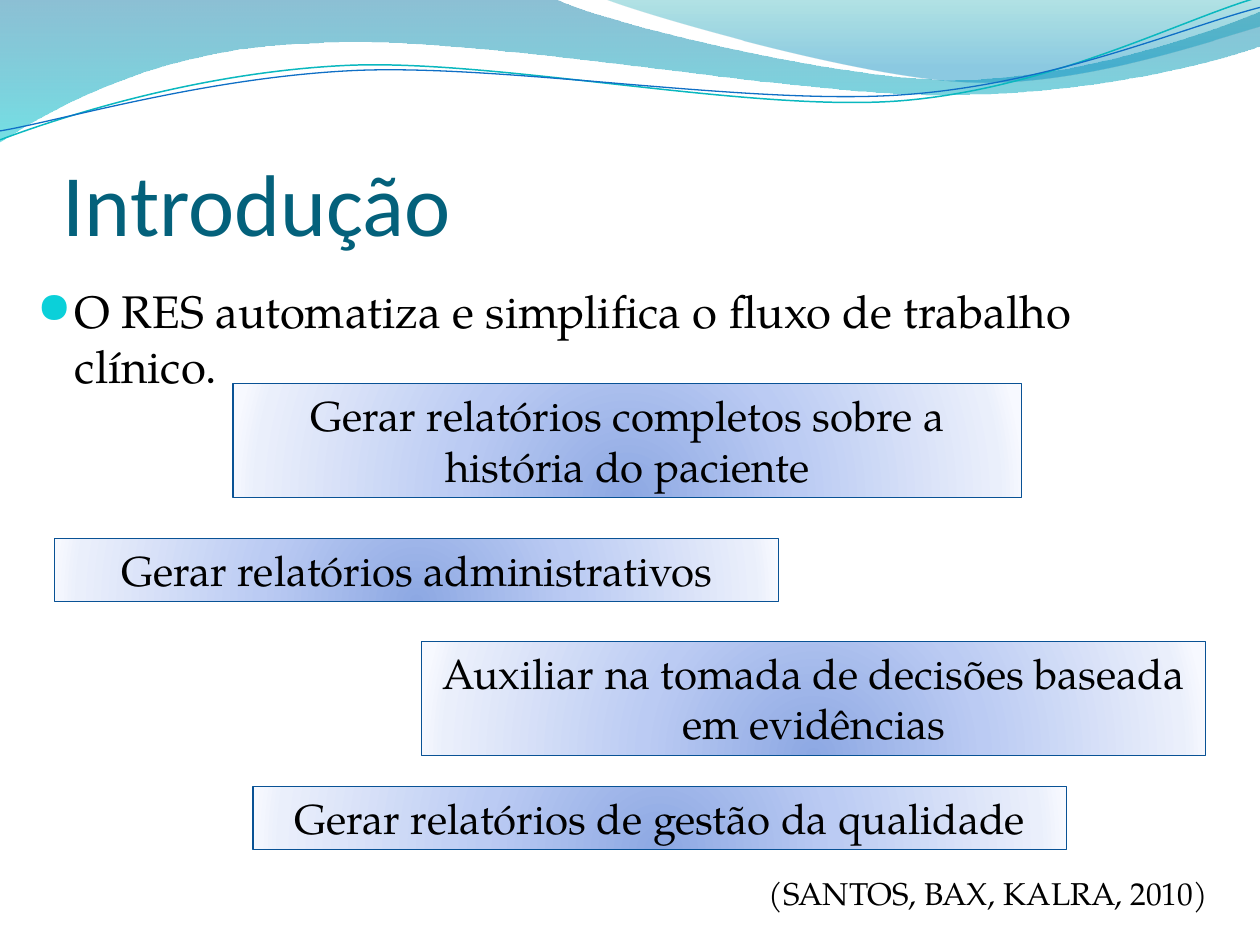
from lxml import etree
from pptx import Presentation
from pptx.dml.color import RGBColor
from pptx.enum.shapes import MSO_SHAPE
from pptx.enum.text import MSO_ANCHOR, MSO_AUTO_SIZE, PP_ALIGN
from pptx.oxml import parse_xml
from pptx.oxml.ns import nsdecls, qn
from pptx.util import Cm, Pt

BLACK = RGBColor(0x00, 0x00, 0x00)
TITLE_BLUE = RGBColor(0x04, 0x61, 0x7B)
BULLET_CYAN = RGBColor(0x0B, 0xD0, 0xD9)
WAVE_TEAL = RGBColor(0x0A, 0xB8, 0xBF)
WAVE_BLUE = RGBColor(0x0F, 0x6F, 0xC6)
BOX_EDGE = RGBColor(0x09, 0x52, 0x95)

# Gradient stops: position %, colour, opacity %
BAND_STOPS = [(0, RGBColor(0x00, 0x74, 0xA1), 45), (100, RGBColor(0x00, 0xC6, 0xCF), 55)]
CREST_STOPS = [(0, RGBColor(0x00, 0xA1, 0xA9), 30), (80, RGBColor(0x00, 0x8B, 0xBF), 45)]
BOX_STOPS = [
    (0, RGBColor(0x8D, 0xA8, 0xE3), 100),
    (43, RGBColor(0xBB, 0xCB, 0xF3), 100),
    (93, RGBColor(0xEA, 0xEF, 0xFB), 100),
    (100, RGBColor(0xF7, 0xF9, 0xFF), 100),
]
DOWNWARD = '<a:lin ang="5400000" scaled="0"/>'
RADIAL = '<a:path path="circle"><a:fillToRect l="50000" t="130000" r="50000" b="-30000"/></a:path>'

SERIF = "TeX Gyre Pagella"
SANS = "Calibri"

# Wave outlines in cm: a pair is a straight step, a triple of pairs a curve
BAND = [
    (0, 0), (11.18, -0.03),
    ((12.09, 0.43), (16.87, 1.6), (19.25, 1.6)),
    ((21.67, 1.6), (24.33, 0.66), (25.4, 0.23)),
    (25.43, 0.91),
    ((24.97, 1.12), (22.1, 1.93), (18.95, 1.91)),
    ((15.8, 1.91), (9.7, 0.71), (6.53, 0.86)),
    ((3.28, 0.91), (1.17, 2.11), (-0.03, 2.87)),
]
CREST = [
    (12.17, -0.03),
    ((12.93, 0.28), (17.32, 1.57), (19.53, 1.65)),
    ((21.74, 1.75), (24.41, 0.81), (25.4, 0.53)),
    (25.4, 0),
]
# The two thin curves are tilted as a whole
TILT = -2.7
TEAL_LINE = [
    (-0.05, 2.22),
    ((1.19, 1.82), (4.02, 1.04), (7.05, 1.05)),
    ((10.05, 1.07), (15.02, 2.37), (18.08, 2.29)),
    ((21.13, 2.2), (23.87, 0.91), (25.41, 0.55)),
]
BLUE_LINE = [
    (-0.04, 2.04),
    ((1.16, 1.9), (4.18, 1.15), (7.2, 1.16)),
    ((10.25, 1.18), (15.13, 2.25), (18.18, 2.17)),
    ((21.21, 2.1), (23.93, 1.06), (25.45, 0.75)),
]

# Statement boxes: left, top, width, height in cm, relative to their region
STATEMENTS = [
    ("Gerar relatórios completos sobre a história do paciente", 3.6, 0, 15.9, 2.3),
    ("Gerar relatórios administrativos", 0, 3.12, 14.6, 1.28),
    ("Auxiliar na tomada de decisões baseada em evidências", 7.4, 5.2, 15.8, 2.3),
    ("Gerar relatórios de gestão da qualidade", 4, 8.12, 16.4, 1.28),
]


def fill_gradient(shape, stops, direction):
    marks = "".join(
        f'<a:gs pos="{pos * 1000}"><a:srgbClr val="{colour}">'
        f'<a:alpha val="{opacity * 1000}"/></a:srgbClr></a:gs>'
        for pos, colour, opacity in stops
    )
    gradient = parse_xml(
        f'<a:gradFill {nsdecls("a")} rotWithShape="1"><a:gsLst>{marks}</a:gsLst>{direction}</a:gradFill>'
    )
    shape.fill.background()
    none = shape._element.spPr.find(qn("a:noFill"))
    none.getparent().replace(none, gradient)


def write_text(shape, text, *, size, font=SERIF, colour=BLACK, align=PP_ALIGN.LEFT,
               anchor=MSO_ANCHOR.TOP, side_inset=Cm(0.25), bottom_inset=Cm(0.13),
               bullet=None, grow=False):
    frame = shape.text_frame
    frame.word_wrap = True
    frame.auto_size = MSO_AUTO_SIZE.SHAPE_TO_FIT_TEXT if grow else MSO_AUTO_SIZE.NONE
    frame.vertical_anchor = anchor
    frame.margin_left = frame.margin_right = side_inset
    frame.margin_bottom = bottom_inset
    paragraph = frame.paragraphs[0]
    paragraph.alignment = align
    if bullet is not None:
        props = paragraph._p.get_or_add_pPr()
        props.set("marL", str(Cm(0.76)))
        props.set("indent", str(-Cm(0.76)))
        mark_colour = etree.SubElement(props, qn("a:buClr"))
        etree.SubElement(mark_colour, qn("a:srgbClr"), val=str(bullet))
        etree.SubElement(props, qn("a:buSzPct"), val="95000")
        etree.SubElement(props, qn("a:buFont"), typeface="OpenSymbol")
        etree.SubElement(props, qn("a:buChar"), char="●")
    run = paragraph.add_run()
    run.text = text
    run.font.size = Pt(size)
    run.font.name = font
    run.font.color.rgb = colour


def add_outline(slide, left, top, steps, close):
    """Build a freeform on the end points, then bend its curved steps."""
    def place(point):
        return left + Cm(point[0]), top + Cm(point[1])

    ends = [place(step[-1] if isinstance(step[0], tuple) else step) for step in steps]
    builder = slide.shapes.build_freeform(*ends[0])
    builder.add_line_segments(ends[1:], close=close)
    outline = builder.convert_to_shape()
    outline.shadow.inherit = False
    segments = list(outline._element.iter(qn("a:lnTo")))
    for step, segment in zip(steps[1:], segments):
        if isinstance(step[0], tuple):
            curve = etree.Element(qn("a:cubicBezTo"))
            for x, y in map(place, step):
                etree.SubElement(curve, qn("a:pt"), x=str(x - outline.left), y=str(y - outline.top))
            segment.getparent().replace(segment, curve)
    return outline


def add_waves(slide, left, top):
    # Translucent surfaces
    for steps, stops in ((BAND, BAND_STOPS), (CREST, CREST_STOPS)):
        surface = add_outline(slide, left, top, steps, close=True)
        fill_gradient(surface, stops, DOWNWARD)
        surface.line.fill.background()
    # Thin curves
    for steps, colour, width in ((TEAL_LINE, WAVE_TEAL, 0.85), (BLUE_LINE, WAVE_BLUE, 0.75)):
        curve = add_outline(slide, left, top, steps, close=False)
        curve.rotation = TILT
        curve.fill.background()
        curve.line.color.rgb = colour
        curve.line.width = Pt(width)


def add_label(slide, box, text, **style):
    write_text(slide.shapes.add_textbox(*box), text, **style)


def add_statements(slide, left, top):
    for text, x, y, width, height in STATEMENTS:
        panel = slide.shapes.add_shape(
            MSO_SHAPE.RECTANGLE, left + Cm(x), top + Cm(y), Cm(width), Cm(height))
        panel.shadow.inherit = False
        fill_gradient(panel, BOX_STOPS, RADIAL)
        panel.line.color.rgb = BOX_EDGE
        panel.line.width = Pt(0.75)
        write_text(panel, text, size=24, align=PP_ALIGN.CENTER, grow=True)


def main():
    deck = Presentation()
    deck.slide_width, deck.slide_height = Cm(25.4), Cm(19.05)
    slide = deck.slides.add_slide(deck.slide_layouts[6])

    add_waves(slide, Cm(0), Cm(0))
    # Title
    add_label(slide, (Cm(1.27), Cm(1.96), Cm(22.86), Cm(3.17)), "Introdução", size=50, font=SANS,
              colour=TITLE_BLUE, anchor=MSO_ANCHOR.BOTTOM, side_inset=0, bottom_inset=0)
    # Main point
    add_label(slide, (Cm(0.5), Cm(5.58), Cm(24.13), Cm(2.95)),
              "O RES automatiza e simplifica o fluxo de trabalho clínico.",
              size=26, bullet=BULLET_CYAN)
    # Citation
    add_label(slide, (Cm(8.9), Cm(17.5), Cm(15.7), Cm(1.02)),
              "(SANTOS, BAX, KALRA, 2010)", size=18, align=PP_ALIGN.RIGHT, grow=True)
    add_statements(slide, Cm(1.1), Cm(7.73))

    deck.save("out.pptx")


if __name__ == "__main__":
    main()
